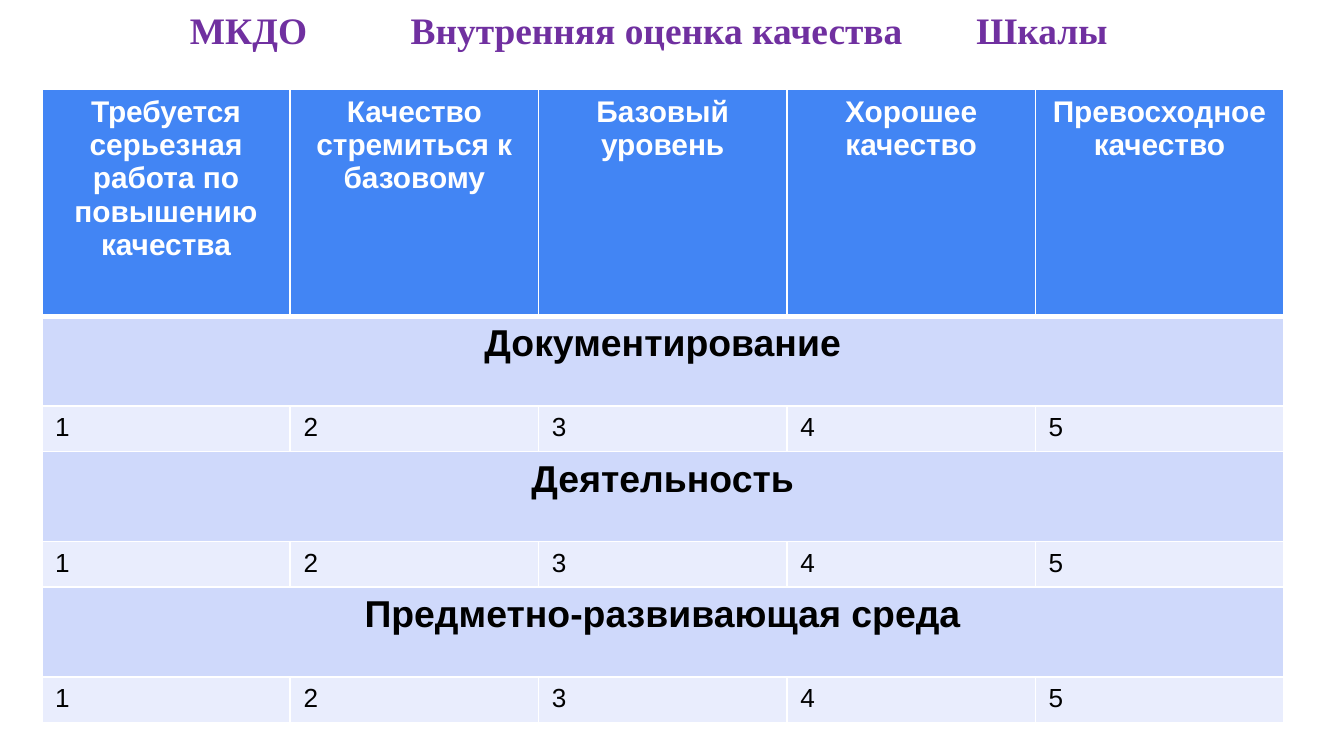
from lxml.etree import SubElement
from pptx import Presentation
from pptx.dml.color import RGBColor
from pptx.enum.text import MSO_ANCHOR, MSO_AUTO_SIZE, PP_ALIGN
from pptx.oxml.ns import qn
from pptx.util import Cm, Pt

PURPLE = RGBColor(0x70, 0x30, 0xA0)
BLUE = RGBColor(0x42, 0x85, 0xF4)
LAVENDER = RGBColor(0xCF, 0xD9, 0xFB)
PALE = RGBColor(0xE9, 0xED, 0xFD)
WHITE = RGBColor(0xFF, 0xFF, 0xFF)
BLACK = RGBColor(0, 0, 0)

HEADING = ["МКДО", "Внутренняя оценка качества", "Шкалы"]
HEADING_STOPS = [Cm(4.17), Cm(14.86)]
LEVELS = [
    "Требуется серьезная работа по повышению качества",
    "Качество стремиться к базовому",
    "Базовый уровень",
    "Хорошее качество",
    "Превосходное качество",
]
SECTIONS = ["Документирование", "Деятельность", "Предметно-развивающая среда"]
LEVEL_HEIGHT, SECTION_HEIGHT, SCORE_HEIGHT = Cm(4.29), Cm(1.7), Cm(0.86)


def add_run(paragraph, text, size, color, bold=True, font="Arial"):
    """Append a formatted run to a paragraph."""
    run = paragraph.add_run()
    run.text = text
    run.font.name = font
    run.font.size = Pt(size)
    run.font.bold = bold
    run.font.color.rgb = color


def add_borders(cell, bottom=1):
    """Draw white lines around a cell, the lower one of the given width."""
    properties = cell._tc.get_or_add_tcPr()
    for side, width in (("L", 1), ("R", 1), ("T", 1), ("B", bottom)):
        line = SubElement(properties, qn(f"a:ln{side}"), w=str(Pt(width)))
        solid = SubElement(line, qn("a:solidFill"))
        SubElement(solid, qn("a:srgbClr"), val=str(WHITE))


def fill_cell(cell, text, size, color, fill, bold=True, align=PP_ALIGN.CENTER, bottom=1):
    """Write and format one table cell."""
    add_borders(cell, bottom)
    cell.fill.solid()
    cell.fill.fore_color.rgb = fill
    paragraph = cell.text_frame.paragraphs[0]
    paragraph.alignment = align
    add_run(paragraph, text, size, color, bold)


def place_heading(slide, left, top, width, height):
    """Set the three heading parts on tab stops in the title placeholder."""
    heading = slide.shapes.title
    heading.left, heading.top, heading.width, heading.height = left, top, width, height
    frame = heading.text_frame
    frame.auto_size = MSO_AUTO_SIZE.NONE
    frame.word_wrap = True
    frame.vertical_anchor = MSO_ANCHOR.TOP
    frame.margin_left = Cm(2.57)
    paragraph = frame.paragraphs[0]
    paragraph.alignment = PP_ALIGN.LEFT
    stops = SubElement(paragraph._p.get_or_add_pPr(), qn("a:tabLst"))
    for stop in HEADING_STOPS:
        SubElement(stops, qn("a:tab"), pos=str(stop), algn="l")
    add_run(paragraph, "\t".join(HEADING), 20, PURPLE, font="Times New Roman")


def place_scales(slide, left, top, width):
    """Build the quality scale table: levels, then a score row per section."""
    heights = [LEVEL_HEIGHT] + [SECTION_HEIGHT, SCORE_HEIGHT] * len(SECTIONS)
    columns = len(LEVELS)
    scales = slide.shapes.add_table(
        len(heights), columns, left, top, width, sum(heights)
    ).table
    for row, height in zip(scales.rows, heights):
        row.height = height
    for column, level in enumerate(LEVELS):
        fill_cell(scales.cell(0, column), level, 16, WHITE, BLUE, bottom=3)
    for index, section in enumerate(SECTIONS):
        row = 1 + 2 * index
        banner = scales.cell(row, 0)
        banner.merge(scales.cell(row, columns - 1))
        fill_cell(banner, section, 20, BLACK, LAVENDER)
        for column in range(columns):
            fill_cell(scales.cell(row + 1, column), str(column + 1), 14, BLACK, PALE,
                      bold=False, align=PP_ALIGN.LEFT)


def main():
    """Build and save the slide."""
    presentation = Presentation()
    presentation.slide_width, presentation.slide_height = Cm(25.4), Cm(14.28)
    slide = presentation.slides.add_slide(presentation.slide_layouts[5])
    place_heading(slide, Cm(1.02), Cm(0), Cm(22.33), Cm(1.2))
    place_scales(slide, Cm(0.79), Cm(1.68), Cm(23.47))
    presentation.save("out.pptx")


if __name__ == "__main__":
    main()
